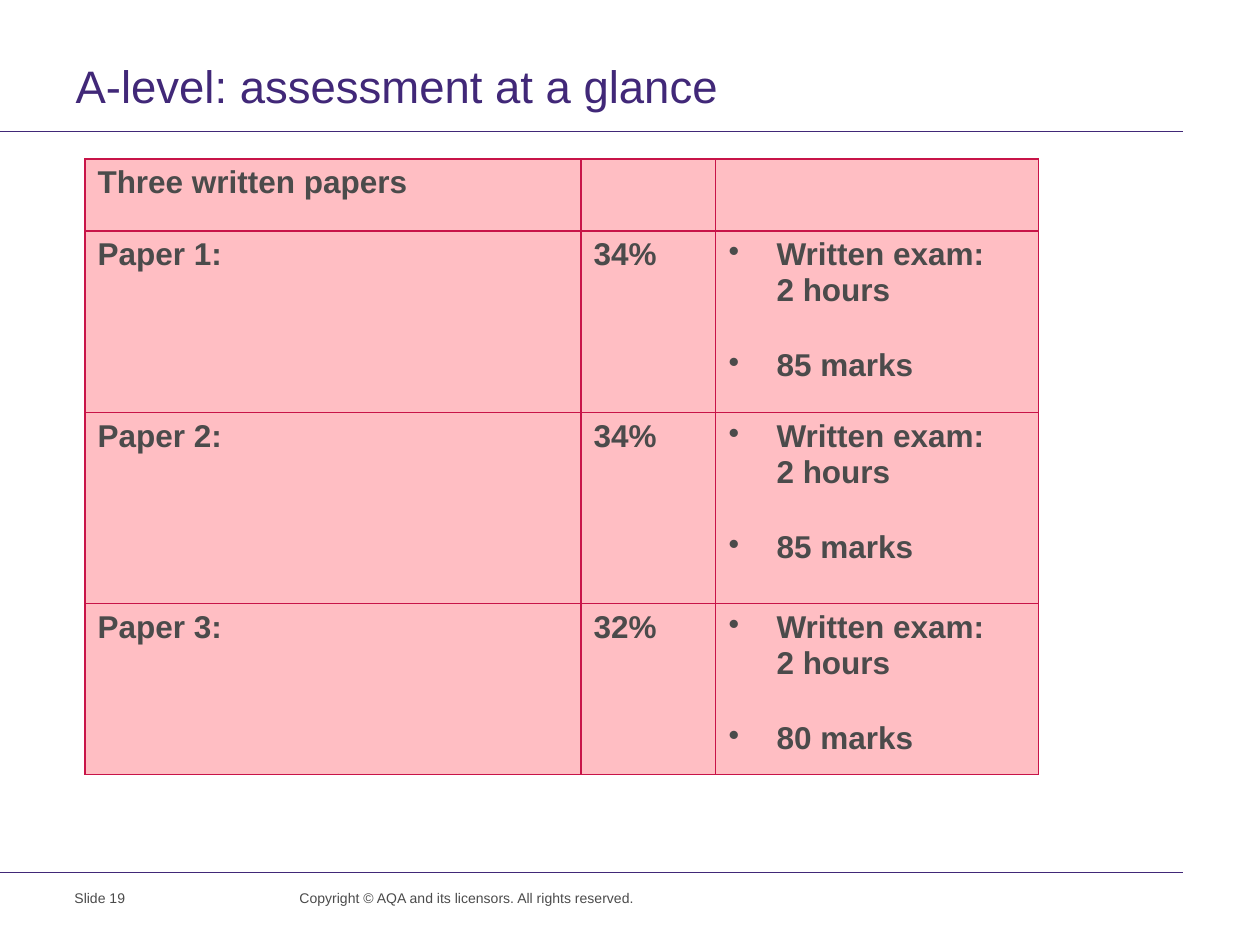
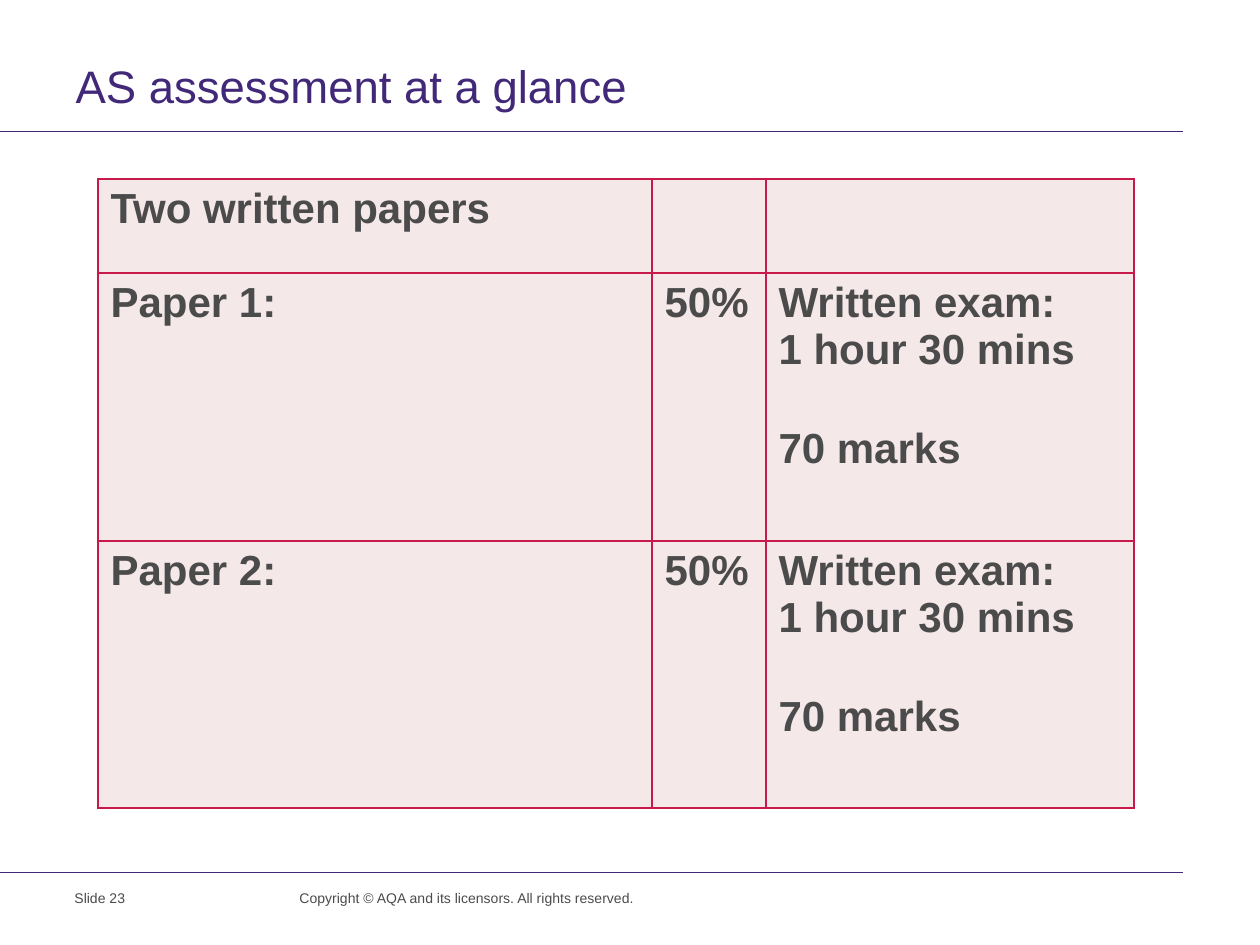
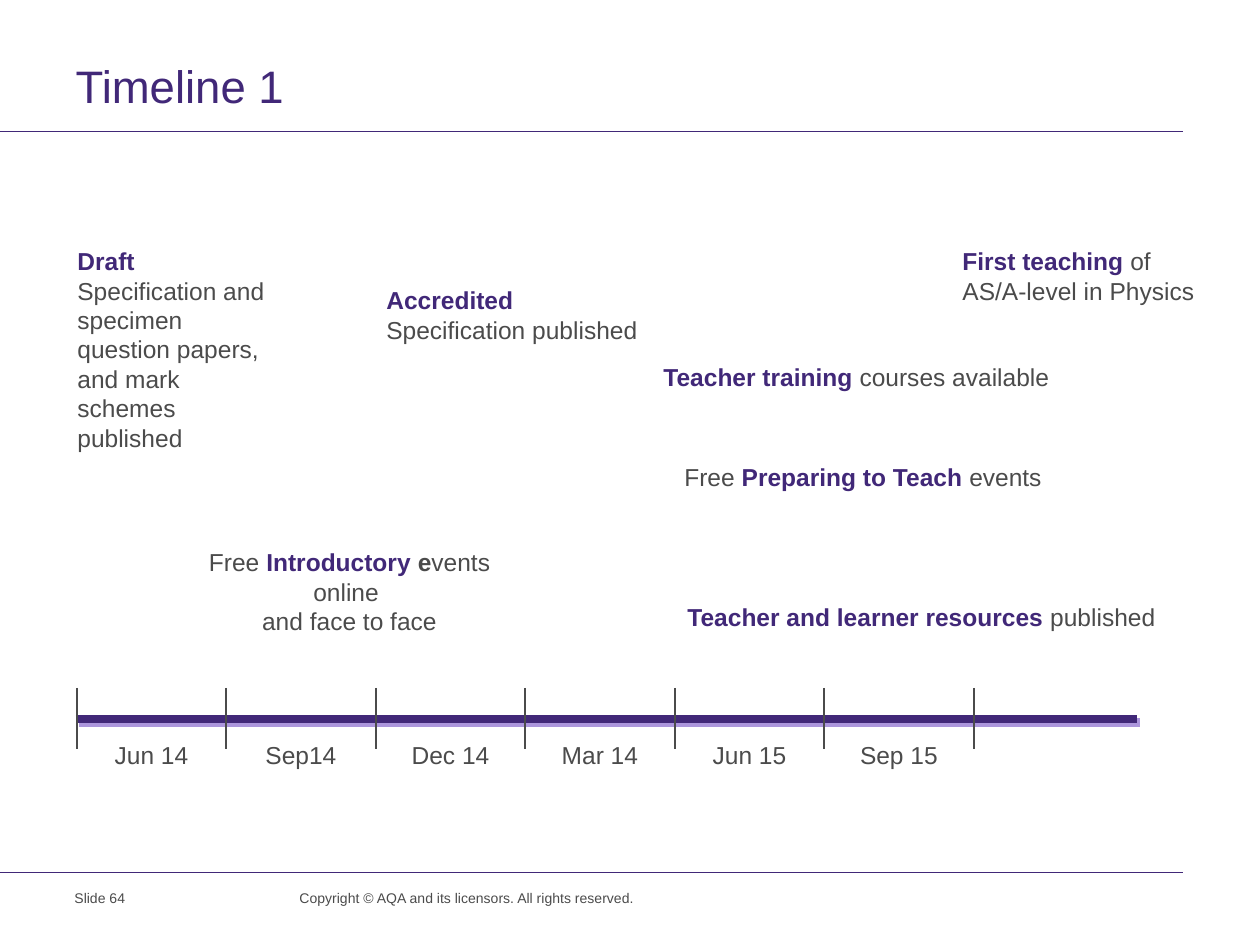
"""Build three slides on assessment papers and the teaching timeline."""
from dataclasses import dataclass

import pptx
import pptx.dml.color
import pptx.enum.shapes
import pptx.enum.text
import pptx.oxml
import pptx.oxml.ns
import pptx.util

RGBColor = pptx.dml.color.RGBColor
PURPLE = RGBColor(0x41, 0x28, 0x78)
GREY = RGBColor(0x4B, 0x4B, 0x4B)
LILAC = RGBColor(0xAC, 0x96, 0xDC)
PINK = RGBColor(0xFF, 0xBE, 0xC3)
BLUSH = RGBColor(0xF5, 0xE8, 0xE9)
CRIMSON = RGBColor(0xC8, 0x14, 0x48)
CERISE = RGBColor(0xC8, 0x19, 0x4B)

FONT = "Arial"
PX_PER_INCH = 126
RULE_RIGHT = 1183
COPYRIGHT = "Copyright © AQA and its licensors. All rights reserved."
LEFT = pptx.enum.text.PP_ALIGN.LEFT
CENTER = pptx.enum.text.PP_ALIGN.CENTER
NS = pptx.oxml.ns.nsdecls("a")


@dataclass(frozen=True)
class Box:
    left: int
    top: int
    width: int
    height: int


@dataclass(frozen=True)
class Words:
    text: str
    bold: bool = False
    color: RGBColor = GREY


@dataclass(frozen=True)
class Note:
    box: Box
    paragraphs: tuple[tuple[Words, ...], ...]
    align: pptx.enum.text.PP_ALIGN = LEFT


@dataclass(frozen=True)
class Paper:
    name: str
    weight: str
    exam: str
    marks: str


@dataclass(frozen=True)
class Assessment:
    title: str
    number: int
    heading: str
    papers: tuple[Paper, ...]
    left: int
    top: int
    columns: tuple[int, ...]
    rows: tuple[int, ...]
    size: int
    marks_gap: int
    bulleted: bool
    fill: RGBColor
    border: RGBColor
    border_width: float


def px(length: int) -> pptx.util.Emu:
    """Turn pixels into EMU."""
    return pptx.util.Emu(round(length * 914400 / PX_PER_INCH))


def key(text: str) -> Words:
    """Return emphasised words."""
    return Words(text, True, PURPLE)


A_LEVEL = Assessment(
    "A-level: assessment at a glance", 19, "Three written papers",
    (Paper("Paper 1:", "34%", "Written exam: \v2 hours", "85 marks"),
     Paper("Paper 2:", "34%", "Written exam: \v2 hours", "85 marks"),
     Paper("Paper 3:", "32%", "Written exam: \v2 hours", "80 marks")),
    85, 159, (496, 135, 323), (72, 182, 191, 171), 18, 23, True, PINK, CRIMSON, 0.75)

AS_LEVEL = Assessment(
    "AS assessment at a glance", 23, "Two written papers",
    (Paper("Paper 1:", "50%", "Written exam: \v1 hour 30 mins", "70 marks"),
     Paper("Paper 2:", "50%", "Written exam: \v1 hour 30 mins", "70 marks")),
    98, 179, (554, 114, 368), (94, 268, 267), 24, 30, False, BLUSH, CERISE, 1)

MILESTONES = (
    Note(Box(950, 240, 270, 117), ((key("First teaching "), Words("of AS/A-level in Physics")),)),
    Note(Box(65, 240, 223, 220), ((key("Draft "), Words(
        "Specification and specimen question papers, and mark schemes published")),)),
    Note(Box(195, 541, 309, 146), (
        (Words("Free "), key("Introductory "), Words("e", True), Words("vents online ")),
        (Words("and face to face"),)), CENTER),
    Note(Box(374, 279, 279, 72), ((key("Accredited "), Words("Specification published")),)),
    Note(Box(672, 456, 464, 43), (
        (Words("Free "), key("Preparing to Teach "), Words("events")),)),
    Note(Box(651, 356, 447, 43), ((key("Teacher training "), Words("courses available")),)),
    Note(Box(675, 596, 522, 43), ((key("Teacher and learner resources "), Words("published")),)),
)
MONTHS = ("Jun 14", "Sep14", "Dec 14", "Mar 14", "Jun 15", "Sep 15")
AXIS_LEFT, AXIS_RIGHT, AXIS_Y = 76, 1137, 719
FIRST_TICK, LAST_TICK = 77, 974
TICK_TOP, TICK_BOTTOM = 688, 749
MONTH_TOP, MONTH_HEIGHT = 734, 42


def style(font, size: float, color: RGBColor, bold: bool = False) -> None:
    """Apply the shared typeface with a size, colour and weight."""
    font.name = FONT
    font.size = pptx.util.Pt(size)
    font.color.rgb = color
    font.bold = bold


def add_line(slide, start: tuple[int, int], end: tuple[int, int], color: RGBColor,
             width: float, shadow: RGBColor | None = None) -> None:
    """Draw a straight line, with a hard offset shadow if asked."""
    line = slide.shapes.add_connector(
        pptx.enum.shapes.MSO_CONNECTOR.STRAIGHT, *map(px, start + end))
    line.line.color.rgb = color
    line.line.width = pptx.util.Pt(width)
    cast = "" if shadow is None else (
        f'<a:outerShdw blurRad="0" dist="35560" dir="2700000" algn="ctr" rotWithShape="0">'
        f'<a:srgbClr val="{shadow}"/></a:outerShdw>')
    line._element.spPr.append(
        pptx.oxml.parse_xml(f"<a:effectLst {NS}>{cast}</a:effectLst>"))


def add_note(slide, note: Note, size: int = 14) -> None:
    """Write a text box of mixed emphasis."""
    box = note.box
    frame = slide.shapes.add_textbox(
        px(box.left), px(box.top), px(box.width), px(box.height)).text_frame
    frame.word_wrap = True
    for index, phrases in enumerate(note.paragraphs):
        paragraph = frame.add_paragraph() if index else frame.paragraphs[0]
        paragraph.alignment = note.align
        for words in phrases:
            run = paragraph.add_run()
            run.text = words.text
            style(run.font, size, words.color, words.bold)


def add_page(deck, title: str, number: int):
    """Add a slide with its title, rules and footer."""
    slide = deck.slides.add_slide(deck.slide_layouts[5])
    for y in (132, 873):
        add_line(slide, (0, y), (RULE_RIGHT, y), PURPLE, 0.6)
    heading = slide.shapes.title
    heading.left, heading.top, heading.width, heading.height = map(px, (63, 57, 1197, 60))
    frame = heading.text_frame
    frame.text = title
    frame.auto_size = pptx.enum.text.MSO_AUTO_SIZE.NONE
    frame.vertical_anchor = pptx.enum.text.MSO_ANCHOR.TOP
    paragraph = frame.paragraphs[0]
    paragraph.alignment = LEFT
    paragraph.line_spacing = pptx.util.Pt(28)
    style(paragraph.runs[0].font, 26, PURPLE)
    add_note(slide, Note(Box(62, 883, 197, 48), ((Words(f"Slide {number}"),),)), 8)
    add_note(slide, Note(Box(287, 883, 369, 33), ((Words(COPYRIGHT),),)), 8)
    return slide


def add_bullet(paragraph) -> None:
    """Give a paragraph a hanging bullet."""
    properties = paragraph._p.get_or_add_pPr()
    properties.set("marL", str(px(48)))
    properties.set("indent", str(px(-48)))
    properties.append(pptx.oxml.parse_xml(f'<a:buChar {NS} char="•"/>'))


def fill_cell(cell, lines: tuple[str, ...], plan: Assessment, bulleted: bool) -> None:
    """Write, border and fill one table cell."""
    properties = cell._tc.get_or_add_tcPr()
    for side in "LRTB":
        properties.append(pptx.oxml.parse_xml(
            f'<a:ln{side} {NS} w="{pptx.util.Pt(plan.border_width)}"><a:solidFill>'
            f'<a:srgbClr val="{plan.border}"/></a:solidFill></a:ln{side}>'))
    cell.fill.solid()
    cell.fill.fore_color.rgb = plan.fill
    for index, line in enumerate(lines):
        frame = cell.text_frame
        paragraph = frame.add_paragraph() if index else frame.paragraphs[0]
        paragraph.text = line
        if bulleted:
            add_bullet(paragraph)
        if index:
            paragraph.space_before = pptx.util.Pt(plan.marks_gap)
        for run in paragraph.runs:
            style(run.font, plan.size, GREY, True)


def add_assessment(deck, plan: Assessment) -> None:
    """Add a slide with the table of papers."""
    slide = add_page(deck, plan.title, plan.number)
    table = slide.shapes.add_table(
        len(plan.rows), len(plan.columns), px(plan.left), px(plan.top),
        px(sum(plan.columns)), px(sum(plan.rows))).table
    table.first_row = table.horz_banding = False
    for column, width in zip(table.columns, plan.columns):
        column.width = px(width)
    for row, height in zip(table.rows, plan.rows):
        row.height = px(height)
    content = [((plan.heading,), (), ())]
    content += [((paper.name,), (paper.weight,), (paper.exam, paper.marks))
                for paper in plan.papers]
    for row, entries in zip(table.rows, content):
        for index, (cell, lines) in enumerate(zip(row.cells, entries)):
            fill_cell(cell, lines, plan, plan.bulleted and index == 2)


def add_timeline(deck) -> None:
    """Add the slide with milestones above a month axis."""
    slide = add_page(deck, "Timeline 1", 64)
    for milestone in MILESTONES:
        add_note(slide, milestone)
    add_line(slide, (AXIS_LEFT, AXIS_Y), (AXIS_RIGHT, AXIS_Y), PURPLE, 5, LILAC)
    ticks = [FIRST_TICK + (LAST_TICK - FIRST_TICK) * step // len(MONTHS)
             for step in range(len(MONTHS) + 1)]
    for x in ticks:
        add_line(slide, (x, TICK_TOP), (x, TICK_BOTTOM), GREY, 1)
    for month, start, end in zip(MONTHS, ticks, ticks[1:]):
        add_note(slide, Note(Box(start, MONTH_TOP, end - start, MONTH_HEIGHT),
                             ((Words(month),),), CENTER))


def main() -> None:
    """Build and save the deck."""
    deck = pptx.Presentation()
    deck.slide_width, deck.slide_height = px(1260), px(945)
    for plan in (A_LEVEL, AS_LEVEL):
        add_assessment(deck, plan)
    add_timeline(deck)
    deck.save("out.pptx")


if __name__ == "__main__":
    main()
